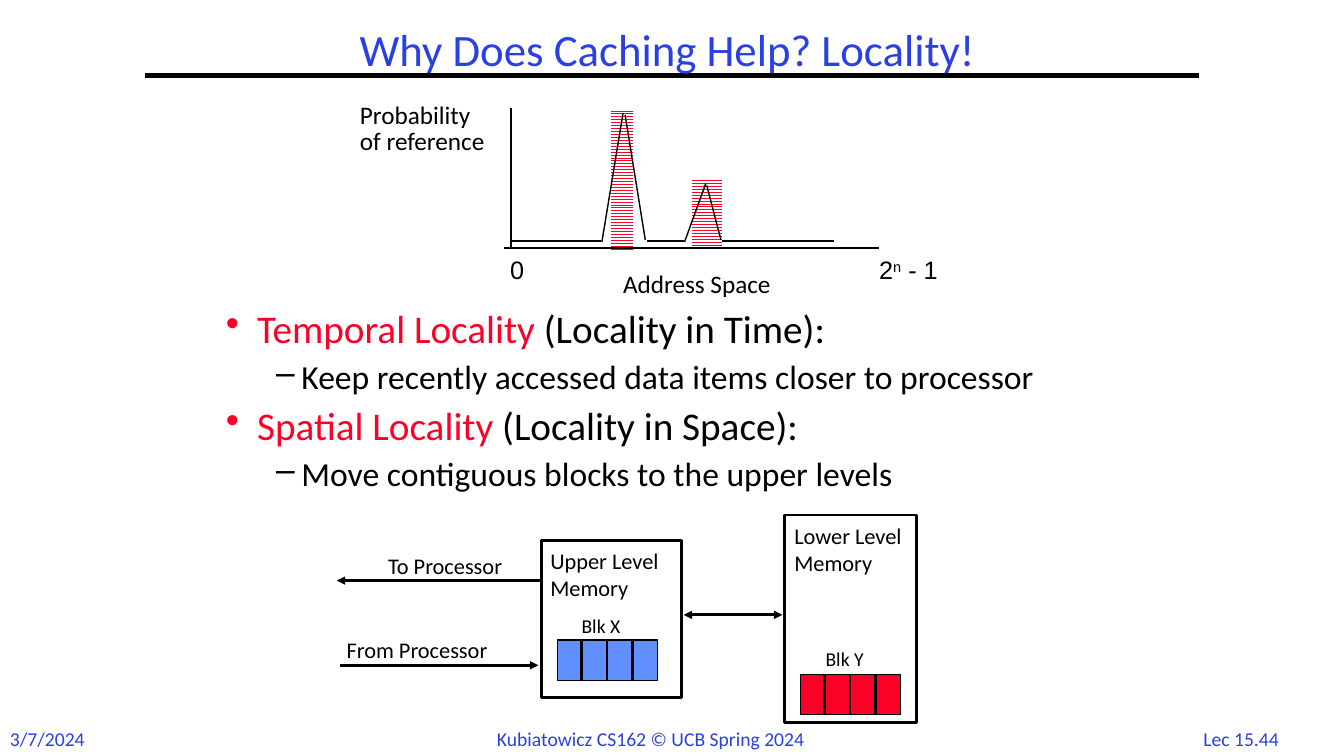
from lxml import etree
from pptx import Presentation
from pptx import util as u
from pptx.dml.color import RGBColor
from pptx.enum import dml, shapes, text
from pptx.oxml.ns import qn

CELL = u.Inches(0.01)
COLUMNS, ROWS = 1333, 750
BLACK, WHITE, BLUE, RED, SKY = "000000", "FFFFFF", "2A40E2", "FC0128", "618FFD"
color = RGBColor.from_string

presentation = Presentation()
presentation.slide_width = COLUMNS * CELL
presentation.slide_height = ROWS * CELL
slide = presentation.slides.add_slide(presentation.slide_layouts[6])


def write(box, lines, size, ink=BLACK, font="Calibri", inset=(10, 5), spacing=1, center=False, wrap=False):
    frame = slide.shapes.add_textbox(*[value * CELL for value in box]).text_frame
    frame.word_wrap = wrap
    frame.auto_size = text.MSO_AUTO_SIZE.SHAPE_TO_FIT_TEXT
    frame.margin_left = frame.margin_right = inset[0] * CELL
    frame.margin_top = frame.margin_bottom = inset[1] * CELL
    for index, line in enumerate(lines):
        paragraph = frame.add_paragraph() if index else frame.paragraphs[0]
        paragraph.add_run().text = line
        paragraph.line_spacing = spacing
        paragraph.font.size = u.Pt(size)
        paragraph.font.name = font
        paragraph.font.color.rgb = color(ink)
        if center:
            paragraph.alignment = text.PP_ALIGN.CENTER
    return frame


def connect(start, end, weight, arrows=()):
    points = [value * CELL for value in (*start, *end)]
    connector = slide.shapes.add_connector(shapes.MSO_CONNECTOR.STRAIGHT, *points)
    connector.line.color.rgb = color(BLACK)
    connector.line.width = u.Pt(weight)
    outline = connector.line._get_or_add_ln()
    for arrow in arrows:
        etree.SubElement(outline, qn(f"a:{arrow}"), type="triangle")
    etree.SubElement(connector._element.spPr, qn("a:effectLst"))


write((1177, 716, 108, 33), ["Lec 15.44"], 14, BLUE, center=True)
write((0, 716, 96, 34), ["3/7/2024"], 14, BLUE)
write((483, 716, 368, 34), ["Kubiatowicz CS162 © UCB Spring 2024"], 14, BLUE)
connect((144, 75), (1189, 75), 3)
write((310, 25, 704, 54), ["Why Does Caching Help? Locality!"], 32, BLUE,
      inset=(7, 3), spacing=0.9, center=True)

points = [
    ("Temporal Locality ", "(Locality in Time):"),
    ("Keep recently accessed data items closer to processor", ""),
    ("Spatial Locality ", "(Locality in Space):"),
    ("Move contiguous blocks to the upper levels", ""),
]
body = write((217, 304, 933, 196), [start for start, rest in points], 24,
             inset=(7, 3), spacing=0.9, wrap=True)
for paragraph, (start, rest) in zip(body.paragraphs, points):
    size, margin, hanging, bullet = (28, 31, 31, "•") if rest else (24, 75, 25, "–")
    paragraph.font.size = u.Pt(size)
    paragraph.space_before = u.Pt(size / 4)
    if rest:
        paragraph.runs[0].font.color.rgb = color(RED)
        paragraph.add_run().text = rest
    else:
        paragraph.level = 1
    properties = paragraph._p.get_or_add_pPr()
    properties.set("marL", str(margin * CELL))
    properties.set("indent", str(-hanging * CELL))
    mark = etree.Element(qn("a:buChar"), char=bullet)
    properties.find(qn("a:defRPr")).addprevious(mark)

for left, top, width, height in [(686, 176, 30, 70), (606, 107, 22, 140)]:
    peak = slide.shapes.add_shape(shapes.MSO_SHAPE.RECTANGLE, left * CELL, top * CELL, width * CELL, height * CELL)
    peak.shadow.inherit = False
    peak.fill.patterned()
    peak.fill.pattern = dml.MSO_PATTERN.ZIG_ZAG
    peak.fill.fore_color.rgb = color(RED)
    peak.fill.back_color.rgb = color(WHITE)
    peak.line.fill.background()

curve = [
    ((507, 107), (507, 245)), ((500, 246), (872, 246)),
    ((507, 239), (596, 239)), ((597, 240), (618, 112)), ((620, 114), (640, 238)),
    ((642, 239), (678, 239)), ((679, 240), (700, 182)), ((701, 184), (715, 238)),
    ((716, 239), (827, 239)),
]
for start, end in curve:
    connect(start, end, 1)

chart_label = {"size": 18, "inset": (7, 3), "spacing": 0.85}
write((611, 268, 185, 31), ["Address Space"], **chart_label)
write((499, 254, 28, 31), ["0"], font="Arial", **chart_label)
write((350, 100, 149, 57), ["Probability", "of reference"], **chart_label)
last_address = write((865, 254, 74, 31), ["2"], font="Arial", **chart_label).paragraphs[0]
exponent = last_address.add_run()
exponent.text = "n"
exponent._r.get_or_add_rPr().set("baseline", "30000")
last_address.add_run().text = " - 1"

rectangles = [
    (537, 536, 139, 156, WHITE, 2), (778, 511, 131, 206, WHITE, 2),
    (553, 635, 99, 40, SKY, 1), (794, 669, 99, 40, RED, 1),
]
for left, top, width, height, fill, weight in rectangles:
    block = slide.shapes.add_shape(shapes.MSO_SHAPE.RECTANGLE, left * CELL, top * CELL, width * CELL, height * CELL)
    block.shadow.inherit = False
    block.fill.solid()
    block.fill.fore_color.rgb = color(fill)
    block.line.color.rgb = color(BLACK)
    block.line.width = u.Pt(weight)

for left, top in [(553, 636), (794, 669)]:
    for divider in range(1, 4):
        across = left + divider * 25 - 1
        connect((across, top), (across, top + 39), 2)

write((778, 513, 141, 64), ["Lower Level", "Memory"], 16)
write((536, 538, 141, 64), ["Upper Level", "Memory"], 16)
write((375, 543, 151, 37), ["To Processor"], 16)
write((334, 626, 180, 37), ["From Processor"], 16)
write((567, 604, 66, 33), ["Blk X"], 14)
write((809, 637, 66, 33), ["Blk Y"], 14)

connect((537, 576), (334, 576), 2, ["tailEnd"])
connect((337, 660), (534, 660), 2, ["tailEnd"])
connect((678, 610), (776, 610), 2, ["headEnd", "tailEnd"])

presentation.save("out.pptx")
